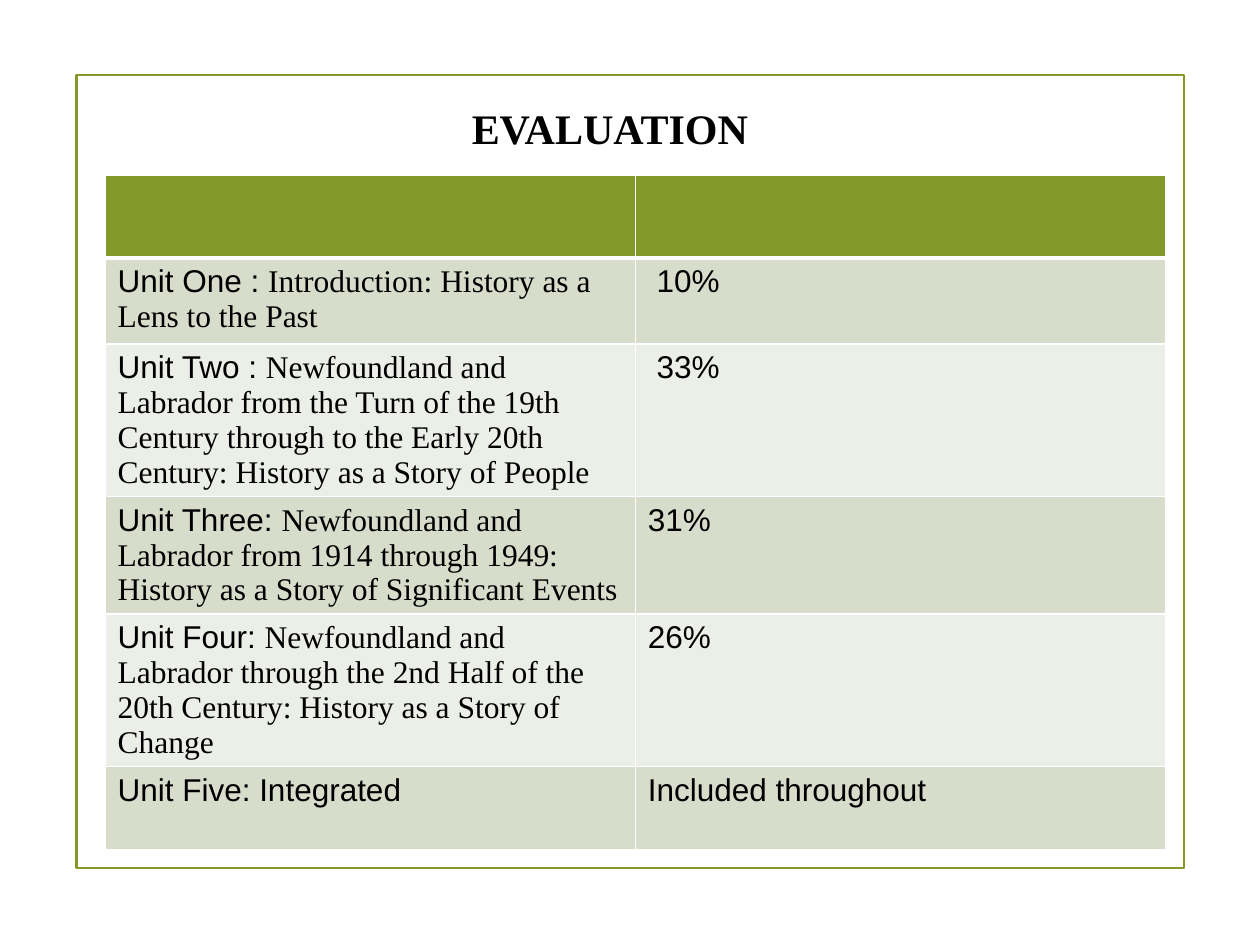
from pptx import Presentation
from pptx.dml.color import RGBColor
from pptx.enum import shapes, text
from pptx.oxml import parse_xml
from pptx.oxml.ns import nsdecls
from pptx.util import Pt

GREEN = RGBColor(0x83, 0x99, 0x2A)
SAGE = RGBColor(0xD8, 0xDD, 0xCB)
PALE = RGBColor(0xEC, 0xEF, 0xE7)
BLACK = RGBColor(0, 0, 0)
WHITE = RGBColor(0xFF, 0xFF, 0xFF)
SANS, SERIF = "Arial", "Times New Roman"

UNITS = [
    ("Unit One : ", "Introduction: History as a Lens to the Past", " 10%", 49),
    ("Unit Two : ", "Newfoundland and Labrador from the Turn of the 19th Century "
     "through to the Early 20th Century: History as a Story of People", " 33%", 87),
    ("Unit Three: ", "Newfoundland and Labrador from 1914 through 1949: "
     "History as a Story of Significant Events", "31%", 67),
    ("Unit Four: ", "Newfoundland and Labrador through the 2nd Half of the "
     "20th Century: History as a Story of Change", "26%", 87),
    ("Unit Five: Integrated", "", "Included throughout", 47.5),
]
HEADER_HEIGHT = 47.5
COLUMN_WIDTH = 303


def add_text(frame, words, font=SANS, size=18, bold=False):
    run = frame.paragraphs[0].add_run()
    run.text = words
    run.font.name = font
    run.font.size = Pt(size)
    run.font.bold = bold
    run.font.color.rgb = BLACK


def style_cell(cell, color, bottom=1):
    """Fill the cell and rule it in white; bottom is the lower line's width."""
    properties = cell._tc.get_or_add_tcPr()
    for side, width in (("L", 1), ("R", 1), ("T", 1), ("B", bottom)):
        properties.append(parse_xml(
            f'<a:ln{side} {nsdecls("a")} w="{Pt(width)}"><a:solidFill>'
            f'<a:srgbClr val="{WHITE}"/></a:solidFill></a:ln{side}>'))
    cell.fill.solid()
    cell.fill.fore_color.rgb = color


prs = Presentation()
prs.slide_width, prs.slide_height = Pt(720), Pt(540)
slide = prs.slides.add_slide(prs.slide_layouts[5])

border = slide.shapes.add_shape(
    shapes.MSO_SHAPE.RECTANGLE, Pt(43.75), Pt(42.75), Pt(633), Pt(453.5))
border.shadow.inherit = False
border.fill.background()
border.line.color.rgb = GREEN
border.line.width = Pt(1.25)

title = slide.shapes.title
title.left, title.top, title.width, title.height = Pt(121.5), Pt(55), Pt(454), Pt(36)
title.text_frame.word_wrap = True
title.text_frame.auto_size = text.MSO_AUTO_SIZE.NONE
title.text_frame.vertical_anchor = text.MSO_ANCHOR.BOTTOM
title.text_frame.paragraphs[0].alignment = text.PP_ALIGN.CENTER
add_text(title.text_frame, "EVALUATION", font=SERIF, size=24, bold=True)

table_height = HEADER_HEIGHT + sum(unit[-1] for unit in UNITS)
evaluation = slide.shapes.add_table(
    len(UNITS) + 1, 2, Pt(60), Pt(100), Pt(2 * COLUMN_WIDTH), Pt(table_height)).table

evaluation.rows[0].height = Pt(HEADER_HEIGHT)
for header in evaluation.rows[0].cells:
    style_cell(header, GREEN, bottom=3)

for number, (unit, topic, weight, height) in enumerate(UNITS, start=1):
    row = evaluation.rows[number]
    row.height = Pt(height)
    unit_cell, weight_cell = row.cells
    for cell in (unit_cell, weight_cell):
        style_cell(cell, SAGE if number % 2 else PALE)
    add_text(unit_cell.text_frame, unit)
    if topic:
        add_text(unit_cell.text_frame, topic, font=SERIF)
    add_text(weight_cell.text_frame, weight)

prs.save("out.pptx")
